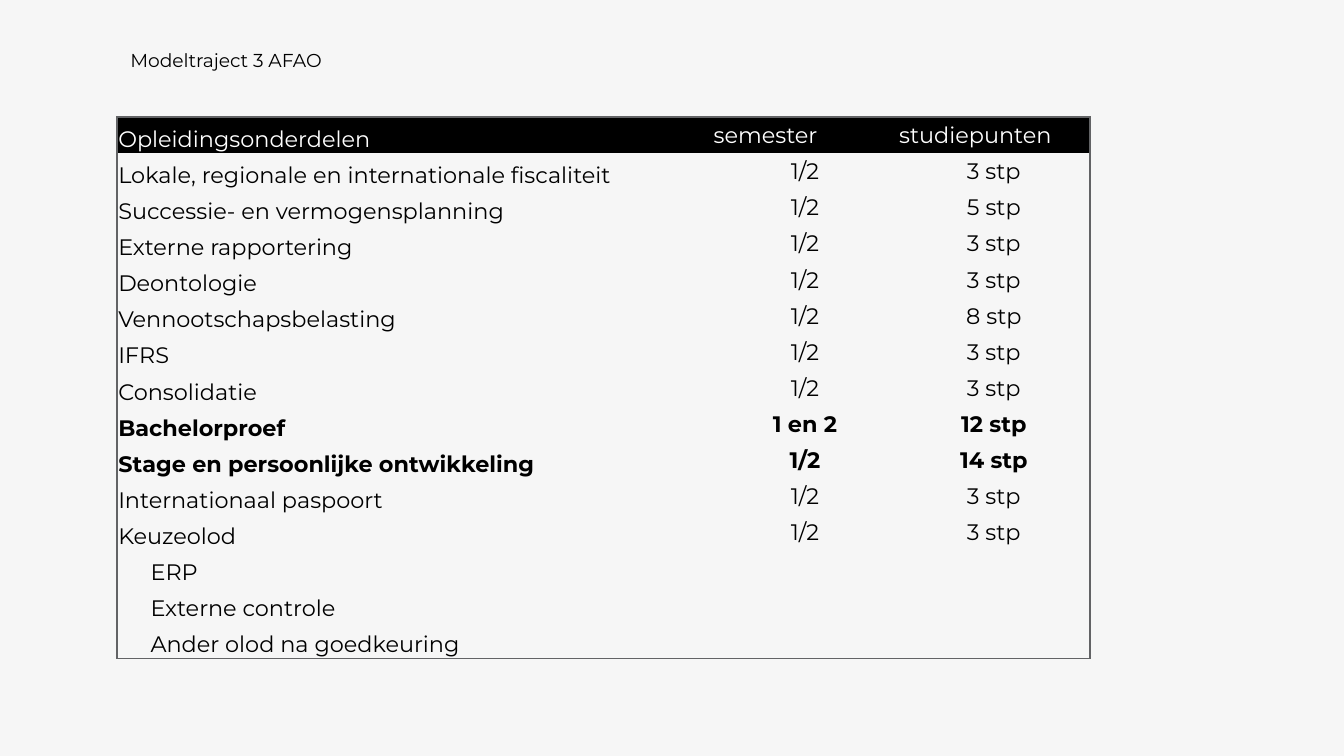
from lxml.etree import SubElement
from pptx import Presentation
from pptx.dml.color import RGBColor
from pptx.enum.text import MSO_ANCHOR as Anchor, PP_ALIGN as Align
from pptx.oxml.ns import qn
from pptx.util import Inches, Pt

FONT = "Montserrat"
BLACK, WHITE, PAPER, GREY = "000000", "FFFFFF", "F6F6F6", "626365"
COLUMN_WIDTHS = (4.43, 1.38, 1.43)
TABLE_HEIGHT = 4.03

HEADER = ("Opleidingsonderdelen", "semester", "studiepunten")
COURSES = [
    ("Lokale, regionale en internationale fiscaliteit", "1/2", "3 stp"),
    ("Successie- en vermogensplanning", "1/2", "5 stp"),
    ("Externe rapportering", "1/2", "3 stp"),
    ("Deontologie", "1/2", "3 stp"),
    ("Vennootschapsbelasting", "1/2", "8 stp"),
    ("IFRS", "1/2", "3 stp"),
    ("Consolidatie", "1/2", "3 stp"),
    ("Bachelorproef", "1 en 2", "12 stp"),
    ("Stage en persoonlijke ontwikkeling", "1/2", "14 stp"),
    ("Internationaal paspoort", "1/2", "3 stp"),
    ("Keuzeolod", "1/2", "3 stp"),
]
ELECTIVES = ["ERP", "Externe controle", "Ander olod na goedkeuring"]
BOLD_COURSES = {"Bachelorproef", "Stage en persoonlijke ontwikkeling"}


def rgb(value):
    return RGBColor.from_string(value)


def set_attributes(target, values):
    for name, value in values.items():
        setattr(target, name, value)


def write_text(para, text, size, color, bold=False):
    span = para.add_run()
    span.text = text
    set_attributes(span.font, {"name": FONT, "size": Pt(size), "bold": bold})
    span.font.color.rgb = rgb(color)


def set_borders(cell, outer_edges):
    """Draw the outer edges in grey and clear the others; call before filling."""
    properties = cell._tc.get_or_add_tcPr()
    for edge in "LRTB":
        line = SubElement(properties, qn(f"a:ln{edge}"), w=str(Pt(0.75)))
        if edge in outer_edges:
            fill = SubElement(line, qn("a:solidFill"))
            SubElement(fill, qn("a:srgbClr"), val=GREY)
        else:
            SubElement(line, qn("a:noFill"))


def format_cell(cell, text, is_header, is_first, indent, bold):
    set_attributes(cell, {
        "margin_left": Inches(indent),
        "margin_right": Inches(0.01),
        "margin_top": Inches(0.01),
        "margin_bottom": 0,
        "vertical_anchor": Anchor.BOTTOM if is_first else Anchor.MIDDLE,
    })
    if is_header:
        cell.fill.solid()
        cell.fill.fore_color.rgb = rgb(BLACK)
    else:
        cell.fill.background()

    para = cell.text_frame.paragraphs[0]
    para.alignment = Align.LEFT if is_header or is_first else Align.CENTER
    if text:
        write_text(para, text, 12, WHITE if is_header else BLACK, bold)
    else:
        # Keeps an empty cell from stretching its row
        SubElement(para._p, qn("a:endParaRPr"), sz="1200")


def add_course_table(page):
    rows = [HEADER, *COURSES, *((name, "", "") for name in ELECTIVES)]
    last_row, last_column = len(rows) - 1, len(HEADER) - 1
    table = page.shapes.add_table(
        len(rows), len(HEADER), Inches(0.87), Inches(0.87),
        Inches(sum(COLUMN_WIDTHS)), Inches(TABLE_HEIGHT)).table
    set_attributes(table, {"first_row": False, "horz_banding": False})
    for column, width in zip(table.columns, COLUMN_WIDTHS):
        column.width = Inches(width)

    for r, values in enumerate(rows):
        table.rows[r].height = Inches(TABLE_HEIGHT / len(rows))
        bold = values[0] in BOLD_COURSES
        for c, text in enumerate(values):
            cell = table.cell(r, c)
            sides = {"L": c == 0, "R": c == last_column,
                     "T": r == 0, "B": r == last_row}
            set_borders(cell, [edge for edge, outer in sides.items() if outer])
            indent = 0.25 if text in ELECTIVES else 0.01
            format_cell(cell, text, r == 0, c == 0, indent, bold)


def add_heading(page, text):
    box = page.placeholders[1]
    set_attributes(box, {"left": Inches(0.87), "top": Inches(0.31),
                         "width": Inches(4.5), "height": Inches(0.35)})
    frame = box.text_frame
    set_attributes(frame, {"word_wrap": True, "vertical_anchor": Anchor.TOP})
    para = frame.paragraphs[0]
    set_attributes(para, {"alignment": Align.LEFT, "space_before": Pt(0)})
    write_text(para, text, 10, BLACK)


def main():
    deck = Presentation()
    width = Inches(10)
    set_attributes(deck, {"slide_width": width, "slide_height": width * 9 // 16})
    page = deck.slides.add_slide(deck.slide_layouts.get_by_name("Section Header"))
    page.background.fill.solid()
    page.background.fill.fore_color.rgb = rgb(PAPER)

    title = page.shapes.title.element
    title.getparent().remove(title)
    add_course_table(page)
    add_heading(page, "Modeltraject 3 AFAO")
    deck.save("out.pptx")


if __name__ == "__main__":
    main()
